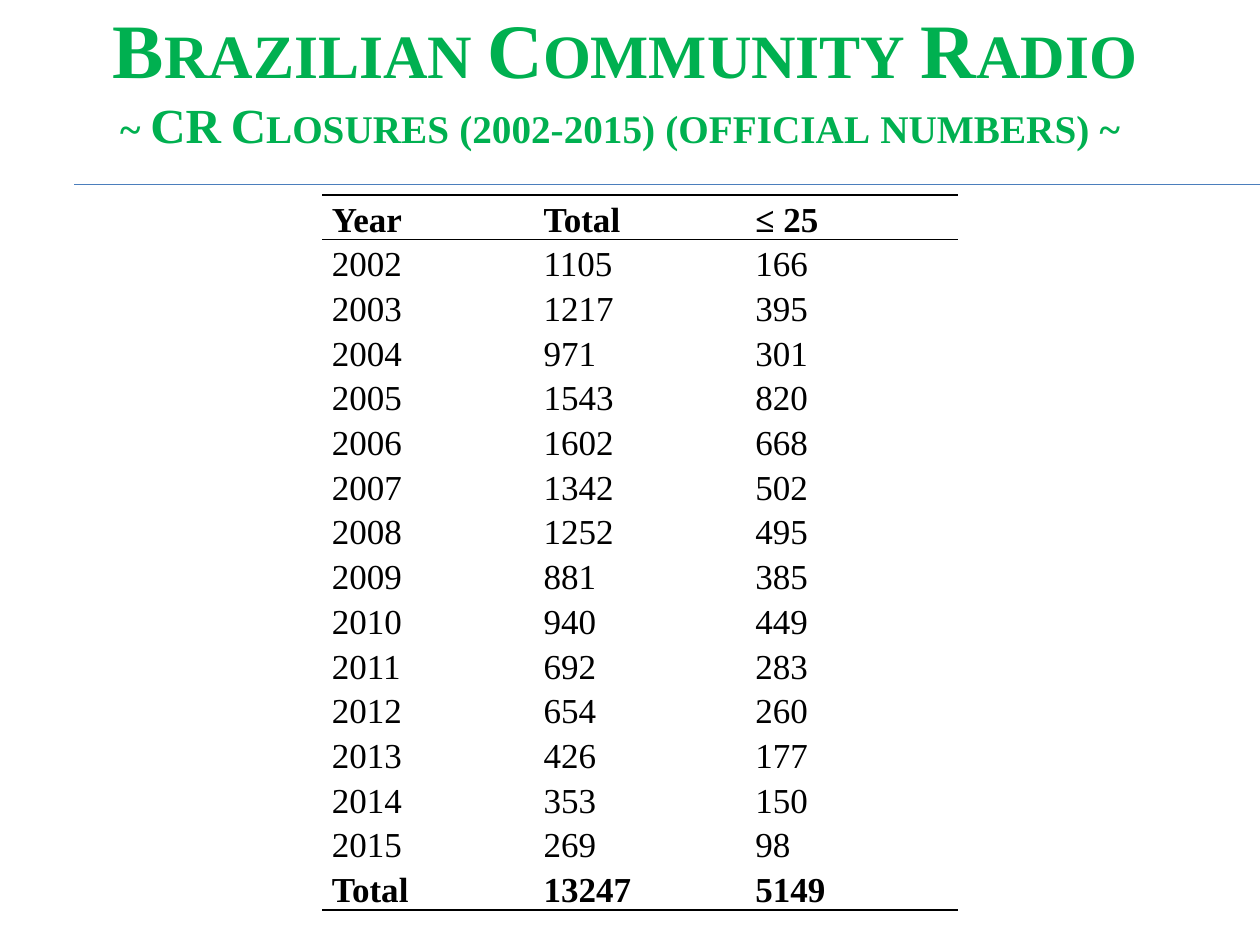
from dataclasses import dataclass

from lxml.etree import SubElement
from pptx import Presentation
from pptx.dml.color import RGBColor
from pptx.enum.shapes import MSO_CONNECTOR as Connector
from pptx.enum.text import MSO_ANCHOR as Anchor, PP_ALIGN as Align
from pptx.oxml.ns import qn
from pptx.util import Cm, Pt

HEADING = "Brazilian Community Radio"
SUBHEADING = "~ CR Closures (2002-2015) (official numbers) ~ "
HEADER = ("Year", "Total", "≤ 25")
CLOSURES = [
    (2002, 1105, 166),
    (2003, 1217, 395),
    (2004, 971, 301),
    (2005, 1543, 820),
    (2006, 1602, 668),
    (2007, 1342, 502),
    (2008, 1252, 495),
    (2009, 881, 385),
    (2010, 940, 449),
    (2011, 692, 283),
    (2012, 654, 260),
    (2013, 426, 177),
    (2014, 353, 150),
    (2015, 269, 98),
]
TOTALS = ("Total", 13247, 5149)


@dataclass(frozen=True)
class Theme:
    font: str = "Times New Roman"
    green: str = "00B050"
    black: str = "000000"
    blue: str = "4B7EBC"
    heading: int = 44
    subheading: int = 28
    body: int = 20
    body_leading: float = 25.5
    thick: float = 1.5
    thin: float = 1
    divider: float = 0.75


THEME = Theme()
SLIDE_WIDTH, SLIDE_HEIGHT = Cm(25.4), Cm(19.05)
DIVIDER_LEFT, DIVIDER_TOP = Cm(1.5), Cm(3.72)
TABLE_LEFT, TABLE_TOP = Cm(6.5), Cm(3.93)
COLUMN_WIDTH, ROW_HEIGHT = Cm(4.27), Cm(0.53)
CELL_MARGIN = Cm(0.19)
PLAIN_TABLE_STYLE = "{2D5ABB26-0587-4C30-8999-92F81FD0307C}"


def add_run(paragraph, text, size, color, bold):
    run = paragraph.add_run()
    run.text = str(text)
    run.font.name = THEME.font
    run.font.size = Pt(size)
    run.font.bold = bold
    run.font.color.rgb = RGBColor.from_string(color)
    for script in ("a:ea", "a:cs"):
        SubElement(run.font._element, qn(script), typeface=THEME.font)
    return run


def add_headings(slide):
    frame = slide.shapes.add_textbox(Cm(-0.5), Cm(-0.48), Cm(26.2), Cm(4.09)).text_frame
    frame.word_wrap = True
    frame.vertical_anchor = Anchor.MIDDLE
    lines = [(HEADING, THEME.heading), (SUBHEADING, THEME.subheading)]
    for number, (text, size) in enumerate(lines):
        paragraph = frame.add_paragraph() if number else frame.paragraphs[0]
        paragraph.alignment = Align.CENTER
        run = add_run(paragraph, text, size, THEME.green, True)
        run.font._element.set("cap", "small")


def add_divider(slide):
    divider = slide.shapes.add_connector(
        Connector.STRAIGHT, DIVIDER_LEFT, DIVIDER_TOP, SLIDE_WIDTH, DIVIDER_TOP)
    divider.line.color.rgb = RGBColor.from_string(THEME.blue)
    divider.line.width = Pt(THEME.divider)
    SubElement(divider._element.spPr, qn("a:effectLst"))


def set_borders(cell, widths):
    """Draw the edges named in widths (lnT, lnB) and clear the others."""
    properties = cell._tc.get_or_add_tcPr()
    for side in ("lnL", "lnR", "lnT", "lnB"):
        edge = SubElement(properties, qn(f"a:{side}"))
        if side in widths:
            edge.set("w", str(Pt(widths[side])))
            fill = SubElement(edge, qn("a:solidFill"))
            SubElement(fill, qn("a:srgbClr"), val=THEME.black)
        else:
            SubElement(edge, qn("a:noFill"))


def add_closures_table(slide):
    rows = [HEADER, *CLOSURES, TOTALS]
    last = len(rows) - 1
    borders = {
        0: {"lnT": THEME.thick, "lnB": THEME.thin},
        1: {"lnT": THEME.thin},
        last: {"lnB": THEME.thin},
    }
    table = slide.shapes.add_table(
        len(rows), len(HEADER), TABLE_LEFT, TABLE_TOP,
        COLUMN_WIDTH * len(HEADER), ROW_HEIGHT * len(rows)).table
    table.first_row = table.horz_banding = False
    table._tbl.tblPr.find(qn("a:tableStyleId")).text = PLAIN_TABLE_STYLE

    for column in table.columns:
        column.width = COLUMN_WIDTH
    for r, values in enumerate(rows):
        table.rows[r].height = ROW_HEIGHT
        for c, value in enumerate(values):
            cell = table.cell(r, c)
            cell.margin_left = cell.margin_right = CELL_MARGIN
            cell.margin_top = cell.margin_bottom = 0
            set_borders(cell, borders.get(r, {}))
            cell.fill.background()
            paragraph = cell.text_frame.paragraphs[0]
            paragraph.line_spacing = Pt(THEME.body_leading)
            add_run(paragraph, value, THEME.body, THEME.black, r in (0, last))


def main():
    deck = Presentation()
    deck.slide_width, deck.slide_height = SLIDE_WIDTH, SLIDE_HEIGHT
    slide = deck.slides.add_slide(deck.slide_layouts[6])
    add_divider(slide)
    add_headings(slide)
    add_closures_table(slide)
    deck.save("out.pptx")


if __name__ == "__main__":
    main()
